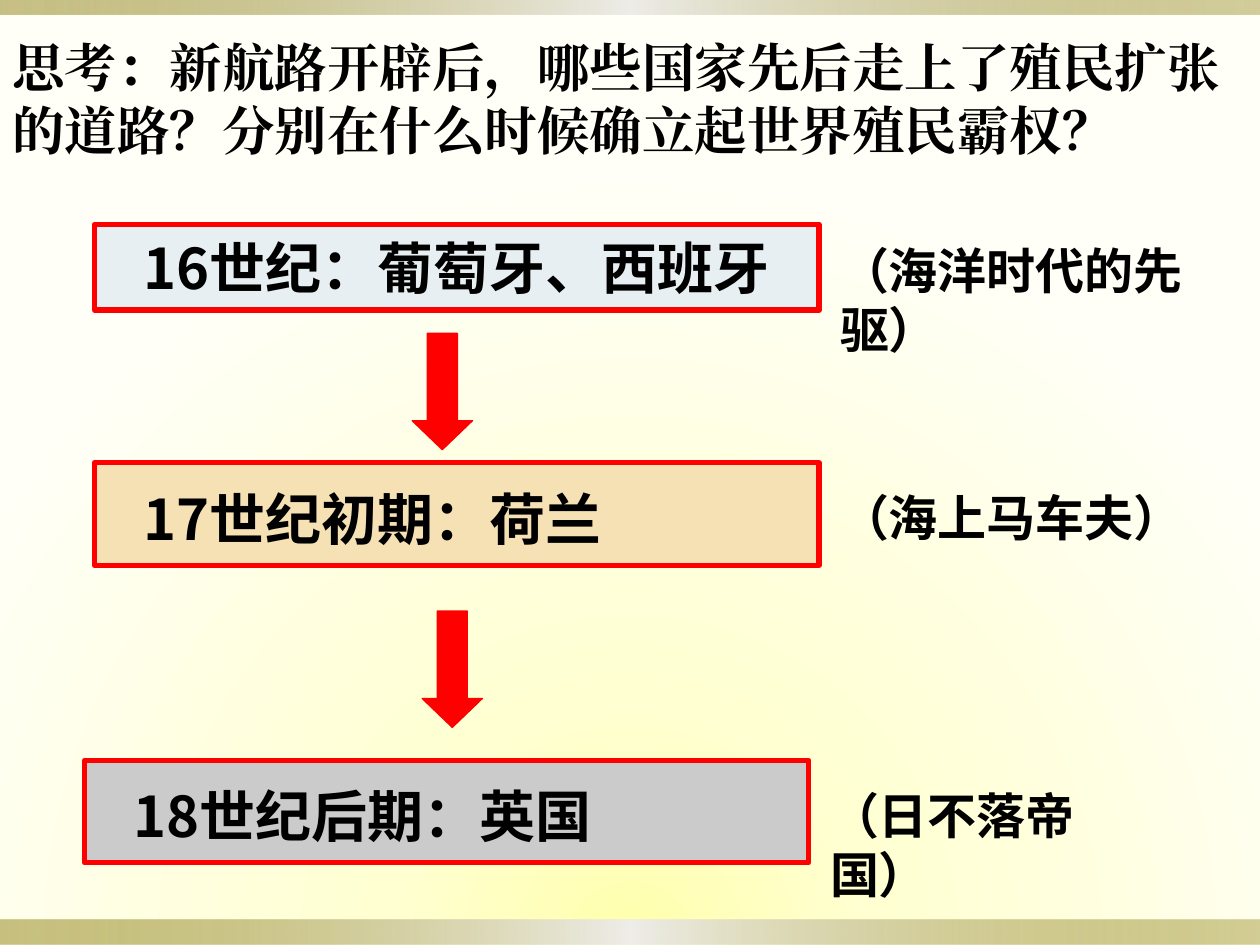
from dataclasses import dataclass

from lxml import etree
from pptx import Presentation
from pptx.dml.color import RGBColor
from pptx.enum import shapes, text
from pptx.oxml import parse_xml
from pptx.oxml.ns import nsdecls, qn
from pptx.util import Pt


@dataclass(frozen=True)
class Theme:
    ink: str = "000000"
    accent: str = "FF0000"
    century_fills: tuple = ("E7EFF2", "F5E1B3", "CBCBCB")
    # Gradient stops: position, colour, opacity (all percent)
    backdrop: tuple = ((0, "FFFFAC", 100), (31, "FFFFD2", 100), (100, "FFFFF7", 100))
    bar: tuple = ((0, "918415", 50), (50, "EEEDE8", 100), (100, "918415", 40))
    question_font: str = "Times New Roman"
    century_font: str = "Noto Sans CJK SC"
    note_font: str = "Cabin"
    question_size: int = 30
    century_size: int = 32
    note_size: int = 28


class SlideBuilder:
    def __init__(self, page, theme):
        self.page = page
        self.theme = theme

    def gradient(self, owner, stops, direction):
        """Give the owner's gradient fill new stops and a new direction."""
        old = owner.xpath(".//a:gradFill")[0]
        marks = "".join(
            f'<a:gs pos="{pos * 1000}"><a:srgbClr val="{color}">'
            f'<a:alpha val="{alpha * 1000}"/></a:srgbClr></a:gs>'
            for pos, color, alpha in stops
        )
        new = parse_xml(
            f'<a:gradFill {nsdecls("a")} rotWithShape="1">'
            f"<a:gsLst>{marks}</a:gsLst>{direction}</a:gradFill>"
        )
        old.getparent().replace(old, new)

    def backdrop(self):
        self.page.background.fill.gradient()
        focus = '<a:fillToRect l="50000" t="150000" r="50000" b="0"/>'
        self.gradient(self.page._element, self.theme.backdrop,
                      f'<a:path path="circle">{focus}</a:path>')

    def shape(self, kind, left, top, width, height):
        shape = self.page.shapes.add_shape(
            kind, Pt(left), Pt(top), Pt(width), Pt(height))
        shape.shadow.inherit = False
        return shape

    def paint(self, shape, fill, line_width):
        shape.fill.solid()
        shape.fill.fore_color.rgb = RGBColor.from_string(fill)
        shape.line.color.rgb = RGBColor.from_string(self.theme.accent)
        shape.line.width = Pt(line_width)

    def bar(self, top, height):
        bar = self.shape(shapes.MSO_SHAPE.RECTANGLE, 0, top, 720, height)
        bar.fill.gradient()
        bar.line.fill.background()
        self.gradient(bar._element, self.theme.bar, '<a:lin ang="0" scaled="1"/>')

    def set_words(self, frame, words, font, size, align):
        frame.word_wrap = True
        frame.text = words
        para = frame.paragraphs[0]
        para.alignment = align
        span = para.runs[0]
        span.font.size = Pt(size)
        span.font.bold = True
        span.font.color.rgb = RGBColor.from_string(self.theme.ink)
        span.font.name = font
        # East Asian characters need their own font entry
        etree.SubElement(span._r.get_or_add_rPr(), qn("a:ea")).set("typeface", font)

    def century(self, words, fill, left, top, height, indent):
        """Boxed century; an indent sets it from the left, none centres it."""
        box = self.shape(shapes.MSO_SHAPE.RECTANGLE, left, top, 414, height)
        self.paint(box, fill, 3)
        frame = box.text_frame
        frame.vertical_anchor = text.MSO_ANCHOR.MIDDLE
        align = text.PP_ALIGN.CENTER
        if indent:
            align = text.PP_ALIGN.LEFT
            frame.margin_left = Pt(indent)
            frame.margin_top = Pt(8)
        self.set_words(frame, words, self.theme.century_font,
                       self.theme.century_size, align)

    def arrow(self, left, top):
        arrow = self.shape(shapes.MSO_SHAPE.DOWN_ARROW, left, top, 34.5, 66.5)
        arrow.adjustments[0] = 0.5
        arrow.adjustments[1] = 0.48
        self.paint(arrow, self.theme.accent, 0.75)

    def label(self, words, font, size, left, top, width, height):
        box = self.page.shapes.add_textbox(Pt(left), Pt(top), Pt(width), Pt(height))
        self.set_words(box.text_frame, words, font, size, text.PP_ALIGN.LEFT)


def main():
    deck = Presentation()
    deck.slide_width, deck.slide_height = Pt(720), Pt(540)
    theme = Theme()
    builder = SlideBuilder(deck.slides.add_slide(deck.slide_layouts[6]), theme)

    # Backdrop and edge bars
    builder.backdrop()
    builder.bar(525.5, 14.5)
    builder.bar(0, 8.5)

    # Centuries: words, left, top, height, indent, note, note width
    steps = [
        ("16世纪：葡萄牙、西班牙", 54, 128.2, 49, 0, "（海洋时代的先驱）", 247),
        ("17世纪初期：荷兰", 54, 264.5, 58.5, 28, "（海上马车夫）", 247),
        ("18世纪后期：英国", 48.2, 434.5, 58.5, 28, "（日不落帝国）", 193),
    ]
    for step, fill in zip(steps, theme.century_fills):
        words, left, top, height, indent, note, note_width = step
        builder.century(words, fill, left, top, height, indent)
        note_top = top + (height - 41) / 2 + 2
        builder.label(note, theme.note_font, theme.note_size,
                      left + 419, note_top, note_width, 41)

    # Arrows from one century to the next
    for left, top in ((235.5, 190.5), (241.2, 349.2)):
        builder.arrow(left, top)

    # Question
    builder.label("思考：新航路开辟后，哪些国家先后走上了殖民扩张的道路？分别在什么时候确立起世界殖民霸权？",
                  theme.question_font, theme.question_size, 0, 16.5, 720, 80)

    deck.save("out.pptx")


if __name__ == "__main__":
    main()
